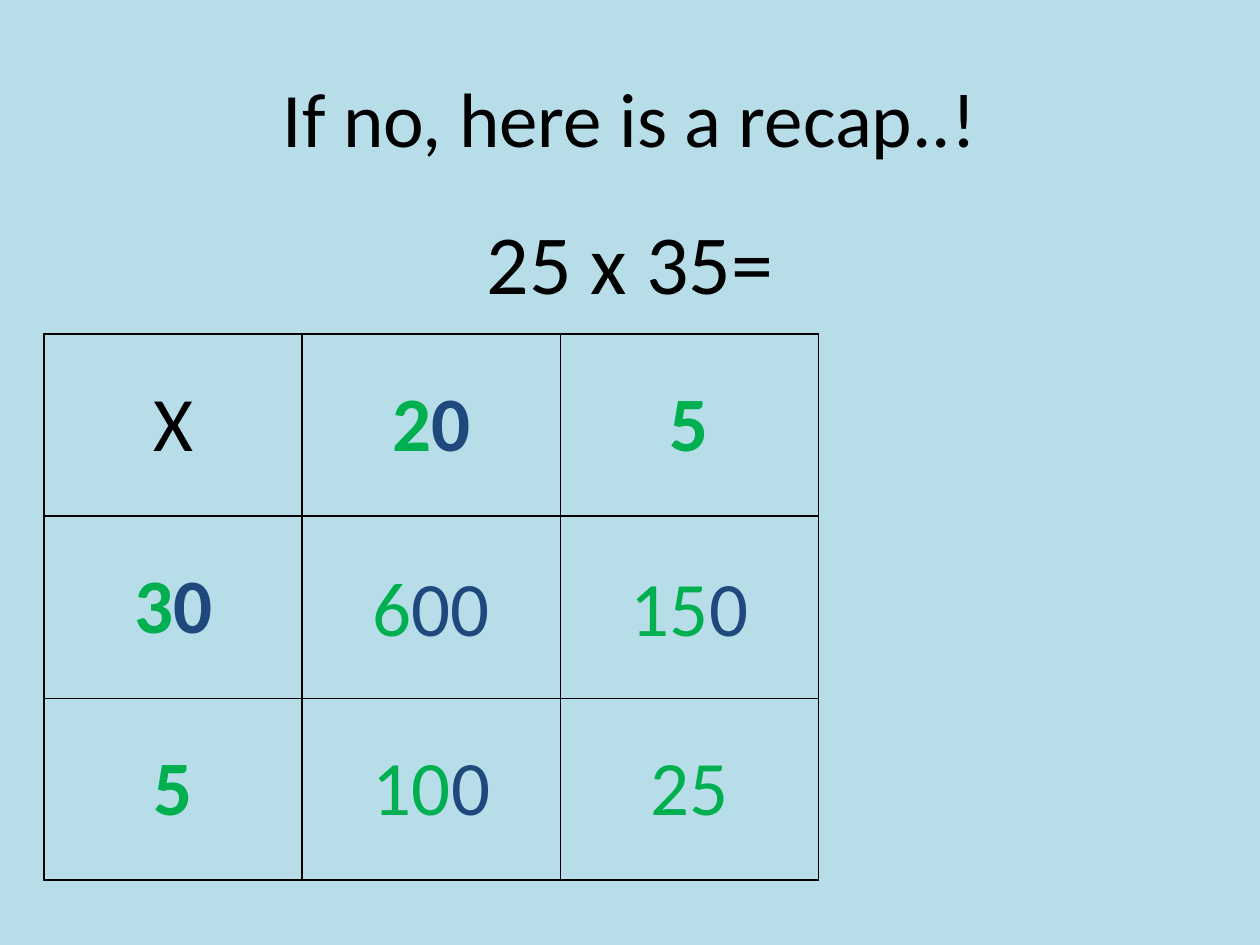
from lxml.etree import SubElement
from pptx import Presentation
from pptx.dml.color import RGBColor
from pptx.enum.shapes import MSO_SHAPE as Shape
from pptx.enum.text import MSO_ANCHOR as Anchor, PP_ALIGN as Align
from pptx.oxml.ns import qn
from pptx.util import Cm, Pt

BACKGROUND = RGBColor(0xB7, 0xDE, 0xE8)
BLACK = RGBColor(0, 0, 0)
GREEN = RGBColor(0x00, 0xB0, 0x50)
BLUE = RGBColor(0x1F, 0x49, 0x7D)

COLUMN_WIDTH, ROW_HEIGHT = 5.2, 3.67
TABLE_LEFT, TABLE_TOP = 0.89, 6.73
VERTICAL_LINES = [1, 1, 0.5, 0.5]
HORIZONTAL_LINES = [1, 1, 0.5, 1]

HEADINGS = {
    (0, 0): [("X", BLACK, False)],
    (0, 1): [("2", GREEN, True), ("0", BLUE, True)],
    (0, 2): [("5", GREEN, True)],
    (1, 0): [("3", GREEN, True), ("0", BLUE, True)],
    (2, 0): [("5", GREEN, True)],
}
PRODUCTS = [
    [[("6", GREEN, False), ("00", BLUE, False)],
     [("15", GREEN, False), ("0", BLUE, False)]],
    [[("10", GREEN, False), ("0", BLUE, False)],
     [("25", GREEN, False)]],
]


def write_text(frame, runs, *, size=44, font="Calibri", align=Align.CENTER,
               anchor=Anchor.MIDDLE):
    frame.word_wrap = True
    frame.vertical_anchor = anchor
    paragraph = frame.paragraphs[0]
    paragraph.alignment = align
    for text, color, bold in runs:
        run = paragraph.add_run()
        run.text = text
        run.font.name = font
        run.font.size = Pt(size)
        run.font.bold = bold
        run.font.color.rgb = color


def draw_border(cell, side, width):
    line = SubElement(cell._tc.get_or_add_tcPr(), qn(f"a:ln{side}"), w=str(Pt(width)))
    fill = SubElement(line, qn("a:solidFill"))
    SubElement(fill, qn("a:srgbClr"), val=str(BLACK))


class SlideBuilder:
    def __init__(self, presentation):
        self.slide = presentation.slides.add_slide(presentation.slide_layouts[5])
        fill = self.slide.background.fill
        fill.solid()
        fill.fore_color.rgb = BACKGROUND

    def title(self, text, left, top, width, height):
        title = self.slide.shapes.title
        title.left, title.top = Cm(left), Cm(top)
        title.width, title.height = Cm(width), Cm(height)
        write_text(title.text_frame, [(text, BLACK, False)])

    def text(self, text, left, top, width, height, **style):
        box = self.slide.shapes.add_textbox(Cm(left), Cm(top), Cm(width), Cm(height))
        write_text(box.text_frame, [(text, BLACK, False)], **style)

    def table(self, headings, left, top):
        rows, columns = len(HORIZONTAL_LINES) - 1, len(VERTICAL_LINES) - 1
        table = self.slide.shapes.add_table(
            rows, columns, Cm(left), Cm(top),
            Cm(columns * COLUMN_WIDTH), Cm(rows * ROW_HEIGHT)).table
        table.first_row = table.horz_banding = False
        for row in range(rows):
            table.rows[row].height = Cm(ROW_HEIGHT)
            for column in range(columns):
                table.columns[column].width = Cm(COLUMN_WIDTH)
                cell = table.cell(row, column)
                cell.margin_left = cell.margin_right = cell.margin_top = Cm(0.03)
                cell.margin_bottom = 0
                draw_border(cell, "L", VERTICAL_LINES[column])
                draw_border(cell, "R", VERTICAL_LINES[column + 1])
                draw_border(cell, "T", HORIZONTAL_LINES[row])
                draw_border(cell, "B", HORIZONTAL_LINES[row + 1])
                cell.fill.background()
                if (row, column) in headings:
                    cell.vertical_anchor = Anchor.MIDDLE
                    write_text(cell.text_frame, headings[row, column])

    def card(self, runs, left, top, width, height):
        shape = self.slide.shapes.add_shape(
            Shape.RECTANGLE, Cm(left), Cm(top), Cm(width), Cm(height))
        shape.shadow.inherit = False
        shape.fill.solid()
        shape.fill.fore_color.rgb = BACKGROUND
        shape.line.fill.background()
        write_text(shape.text_frame, runs)


def main():
    presentation = Presentation()
    presentation.slide_width, presentation.slide_height = Cm(25.4), Cm(19.05)
    builder = SlideBuilder(presentation)
    builder.title("If no, here is a recap..!", 1.27, 0.76, 22.86, 3.18)
    builder.text("25 x 35=", 1.27, 4.12, 22.86, 12.9, size=48, anchor=Anchor.TOP)
    builder.table(HEADINGS, TABLE_LEFT, TABLE_TOP)
    for row, products in enumerate(PRODUCTS):
        for column, runs in enumerate(products):
            builder.card(runs, 6.3 + column * COLUMN_WIDTH, 10.52 + row * 3.6, 4.8, 3.4)
    presentation.save("out.pptx")


if __name__ == "__main__":
    main()
